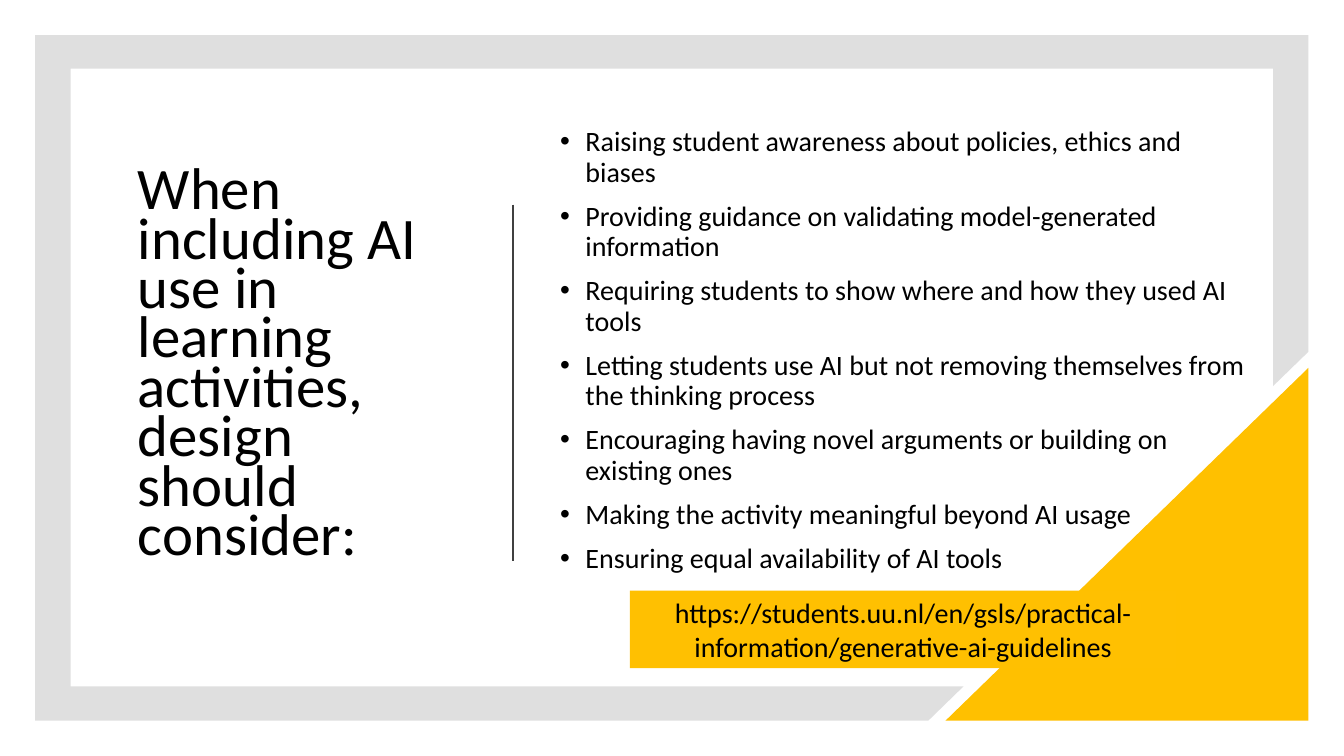
from lxml import etree
from pptx import Presentation
from pptx.dml.color import RGBColor
from pptx.enum.shapes import MSO_CONNECTOR, MSO_SHAPE
from pptx.enum.text import MSO_ANCHOR, PP_ALIGN
from pptx.oxml.ns import qn
from pptx.util import Pt

LINE = MSO_CONNECTOR.STRAIGHT
RECTANGLE = MSO_SHAPE.RECTANGLE
TRIANGLE = MSO_SHAPE.RIGHT_TRIANGLE
MIDDLE = MSO_ANCHOR.MIDDLE
CENTER = PP_ALIGN.CENTER

GRAY = RGBColor(0x80, 0x80, 0x80)
DARK_GRAY = RGBColor(0x40, 0x40, 0x40)
GOLD = RGBColor(0xFF, 0xC0, 0x00)
LINK_GOLD = RGBColor(0xFF, 0xC0, 0x01)
BLACK = RGBColor(0x00, 0x00, 0x00)

FRAME_OUTLINE = [
    (25.2, 25.2), (934.6, 25.2), (934.6, 251.3), (909.4, 275.8), (909.4, 49),
    (50.4, 49), (50.4, 490.3), (688.3, 490.3), (663.1, 514.8), (25.2, 514.8),
]
TITLE = "When including AI use in learning activities, design should consider:"
ADVICE = [
    "Raising student awareness about policies, ethics and biases",
    "Providing guidance on validating model-generated information",
    "Requiring students to show where and how they used AI tools",
    "Letting students use AI but not removing themselves from the thinking process",
    "Encouraging having novel arguments or building on existing ones",
    "Making the activity meaningful beyond AI usage",
    "Ensuring equal availability of AI tools",
]
LINK = "https://students.uu.nl/en/gsls/practical-information/generative-ai-guidelines"


class SlideBuilder:
    font_name = "Calibri"
    text_color = BLACK
    bullet_indent = 18

    def __init__(self, page):
        self.page = page

    def paint(self, shape, color):
        shape.shadow.inherit = False
        shape.fill.solid()
        shape.fill.fore_color.rgb = color
        shape.line.fill.background()

    def outline(self, points, color, opacity):
        """Draw a closed polygon; opacity is in percent."""
        start, *rest = [(Pt(x), Pt(y)) for x, y in points]
        builder = self.page.shapes.build_freeform(*start)
        builder.add_line_segments(rest, close=True)
        shape = builder.convert_to_shape()
        self.paint(shape, color)
        color_element = shape._element.spPr.find(qn("a:solidFill"))[0]
        alpha = etree.SubElement(color_element, qn("a:alpha"))
        alpha.set("val", str(opacity * 1000))

    def shape(self, kind, left, top, width, height, color, flipped=False):
        shape = self.page.shapes.add_shape(
            kind, Pt(left), Pt(top), Pt(width), Pt(height))
        self.paint(shape, color)
        if flipped:
            shape._element.spPr.xfrm.set("flipH", "1")
        return shape

    def vertical_line(self, x, top, bottom, color, weight):
        line = self.page.shapes.add_connector(LINE, Pt(x), Pt(top), Pt(x), Pt(bottom))
        line.line.color.rgb = color
        line.line.width = Pt(weight)
        etree.SubElement(line._element.spPr, qn("a:effectLst"))

    def text_box(self, left, top, width, height):
        return self.page.shapes.add_textbox(Pt(left), Pt(top), Pt(width), Pt(height))

    def fill_text(self, box, texts, size, spacing=1.0, gap=0, bullets=False, align=None):
        frame = box.text_frame
        frame.word_wrap = True
        frame.vertical_anchor = MIDDLE
        frame.text = "\n".join(texts)
        for index, para in enumerate(frame.paragraphs):
            para.line_spacing = spacing
            para.space_before = Pt(gap if index else 0)
            para.alignment = align
            if bullets:
                self.add_bullet(para)
            for span in para.runs:
                span.font.name = self.font_name
                span.font.size = Pt(size)
                span.font.color.rgb = self.text_color

    def add_bullet(self, para):
        properties = para._p.get_or_add_pPr()
        properties.set("marL", str(Pt(self.bullet_indent)))
        properties.set("indent", str(-Pt(self.bullet_indent)))
        etree.SubElement(properties, qn("a:buFont")).set("typeface", "Arial")
        etree.SubElement(properties, qn("a:buChar")).set("char", "•")


def main():
    deck = Presentation()
    deck.slide_width, deck.slide_height = Pt(960), Pt(540)
    slide = SlideBuilder(deck.slides.add_slide(deck.slide_layouts[6]))

    slide.outline(FRAME_OUTLINE, GRAY, opacity=25)
    slide.shape(TRIANGLE, 675.4, 262.8, 259.2, 252, GOLD, flipped=True)
    slide.vertical_line(366.5, 146.2, 401, DARK_GRAY, weight=1.5)

    title = slide.text_box(91.4, 129.6, 247.7, 266.4)
    slide.fill_text(title, [TITLE], size=42, spacing=0.7)

    advice = slide.text_box(393.1, 78.5, 504, 344.6)
    slide.fill_text(advice, ADVICE, size=20, spacing=0.9, gap=10, bullets=True)

    link = slide.shape(RECTANGLE, 450, 421.9, 390.2, 55.4, LINK_GOLD)
    slide.fill_text(link, [LINK], size=20, align=CENTER)

    deck.save("out.pptx")


if __name__ == "__main__":
    main()
